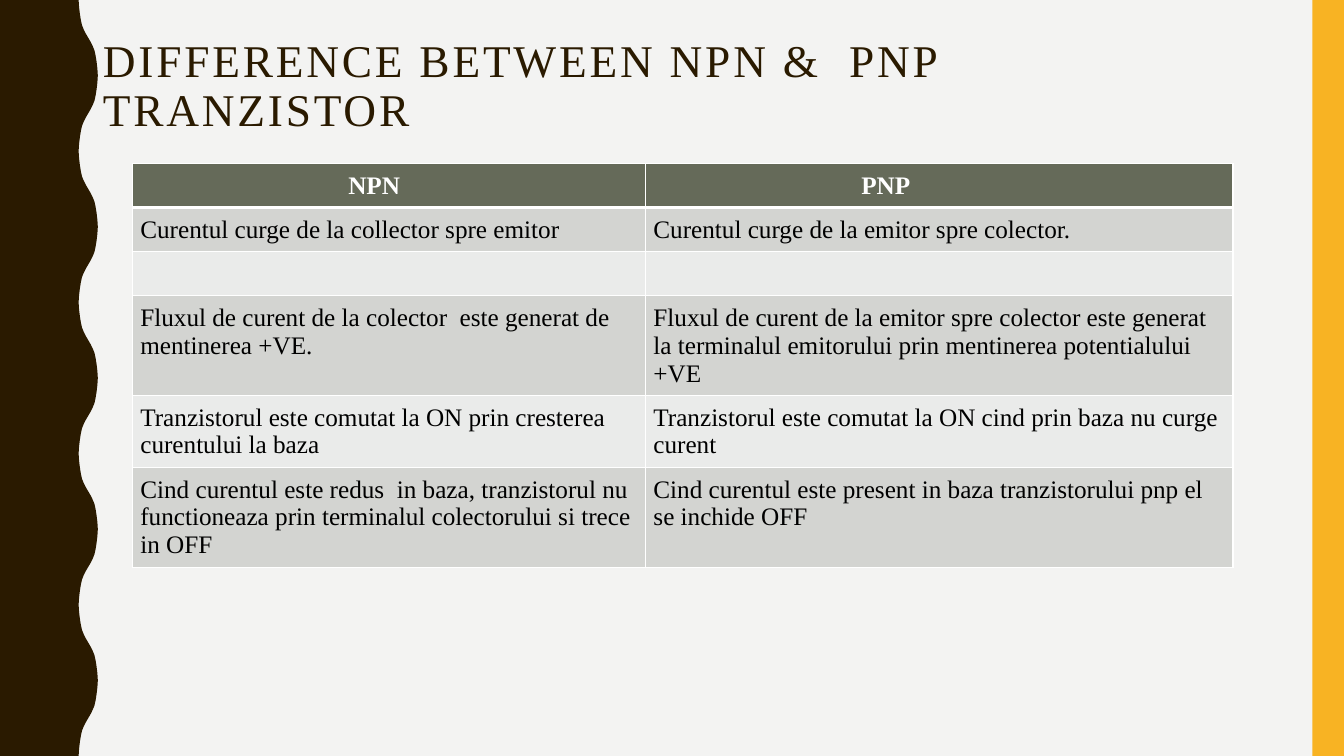
from dataclasses import dataclass

from lxml.etree import SubElement
from pptx import Presentation
from pptx.dml.color import RGBColor as Color
from pptx.enum.shapes import MSO_SHAPE as Shape
from pptx.enum.text import MSO_ANCHOR as Anchor, MSO_AUTO_SIZE as AutoSize, PP_ALIGN as Align
from pptx.oxml.ns import qn
from pptx.util import Pt


@dataclass(frozen=True)
class Theme:
    font: str = "Times New Roman"
    title_size: float = 32.4
    table_size: float = 18
    background: str = "F3F3F2"
    dark: str = "2A1A00"
    accent: str = "F8B323"
    header: str = "656A59"
    band: str = "D3D4D1"
    light_band: str = "EAEBEA"
    white: str = "FFFFFF"
    black: str = "000000"


@dataclass(frozen=True)
class RowStyle:
    fill: str
    color: str
    bold: bool = False
    indent: float = 0
    top_line: float = 1
    bottom_line: float = 1


THEME = Theme()
WIDTH, HEIGHT = 960, 540
TITLE = "DIFFERENCE BETWEEN NPN &  PNP TRANZISTOR"
COLUMN_WIDTHS = (366.5, 419.8)
ROW_HEIGHT = 29.5
CELL_MARGIN = 5.76
ROWS = [
    ("NPN", "PNP"),
    ("Curentul curge de la collector spre emitor",
     "Curentul curge de la emitor spre colector."),
    ("", ""),
    ("Fluxul de curent de la colector  este generat de mentinerea +VE.",
     "Fluxul de curent de la emitor spre colector este generat la terminalul "
     "emitorului prin mentinerea potentialului +VE"),
    ("Tranzistorul este comutat la ON prin cresterea curentului la baza",
     "Tranzistorul este comutat la ON cind prin baza nu curge curent"),
    ("Cind curentul este redus  in baza, tranzistorul nu functioneaza prin "
     "terminalul colectorului si trece in OFF",
     "Cind curentul este present in baza tranzistorului pnp el se inchide OFF"),
]

# One quarter of a wave: (distance down, distance out)
QUARTER_WAVE = [(0, 0), (5, 0.3), (10, 0.9), (14.4, 1.6),
                (18, 2.4), (21, 3.6), (24, 5.1), (27, 6.85)]
WAVE_BASE, WAVE_DEPTH, HALF_WAVE, WAVE_COUNT = 56.2, 13.7, 54, 5


def paint(shape, color: str) -> None:
    shape.shadow.inherit = False
    shape.fill.solid()
    shape.fill.fore_color.rgb = Color.from_string(color)
    shape.line.fill.background()


def format_run(run, size: float, color: str, bold: bool = False) -> None:
    run.font.name = THEME.font
    run.font.size = Pt(size)
    run.font.bold = bold
    run.font.color.rgb = Color.from_string(color)


def wave_points() -> list[tuple[float, float]]:
    out = QUARTER_WAVE + [(HALF_WAVE - y, WAVE_DEPTH - x)
                          for y, x in reversed(QUARTER_WAVE[:-1])]
    period = out + [(2 * HALF_WAVE - y, x) for y, x in reversed(out[1:-1])]
    points = [(WAVE_BASE + x, y + 2 * HALF_WAVE * number)
              for number in range(WAVE_COUNT) for y, x in period]
    return points + [(WAVE_BASE, HEIGHT)]


def draw_side_bands(slide) -> None:
    outline = wave_points() + [(0, HEIGHT)]
    builder = slide.shapes.build_freeform(0, 0)
    builder.add_line_segments([(Pt(x), Pt(y)) for x, y in outline], close=True)
    paint(builder.convert_to_shape(), THEME.dark)

    strip_width = 22.5
    strip = slide.shapes.add_shape(Shape.RECTANGLE, Pt(WIDTH - strip_width), Pt(0),
                                   Pt(strip_width), Pt(HEIGHT))
    paint(strip, THEME.accent)


def draw_title(slide) -> None:
    title = slide.shapes.title
    slide.shapes._spTree.append(title._element)
    title.left, title.top, title.width, title.height = Pt(66.3), Pt(23.8), Pt(838), Pt(46.8)
    text_frame = title.text_frame
    text_frame.text = TITLE
    text_frame.word_wrap = True
    text_frame.auto_size = AutoSize.NONE
    text_frame.vertical_anchor = Anchor.TOP
    paragraph = text_frame.paragraphs[0]
    paragraph.alignment = Align.LEFT
    paragraph.line_spacing = 0.9
    run = paragraph.runs[0]
    format_run(run, THEME.title_size, THEME.dark)
    run._r.get_or_add_rPr().set("spc", "200")


def set_border(cell, side: str, width: float) -> None:
    line = SubElement(cell._tc.get_or_add_tcPr(), qn(f"a:ln{side}"), w=str(Pt(width)))
    fill = SubElement(line, qn("a:solidFill"))
    SubElement(fill, qn("a:srgbClr"), val=THEME.white)


def fill_cell(cell, text: str, style: RowStyle) -> None:
    cell.margin_left = cell.margin_right = Pt(CELL_MARGIN)
    cell.margin_top = cell.margin_bottom = Pt(CELL_MARGIN)
    for side, width in (("L", 1), ("R", 1), ("T", style.top_line), ("B", style.bottom_line)):
        set_border(cell, side, width)
    cell.fill.solid()
    cell.fill.fore_color.rgb = Color.from_string(style.fill)

    paragraph = cell.text_frame.paragraphs[0]
    if text:
        paragraph.text = text
        format_run(paragraph.runs[0], THEME.table_size, style.color, style.bold)
    else:
        # An empty cell keeps the height of one table line
        end = SubElement(paragraph._p, qn("a:endParaRPr"), sz=str(Pt(THEME.table_size).centipoints))
        SubElement(end, qn("a:latin"), typeface=THEME.font)
    if style.indent:
        paragraph._p.get_or_add_pPr().set("marL", str(Pt(style.indent)))


def row_style(index: int) -> RowStyle:
    if index == 0:
        return RowStyle(THEME.header, THEME.white, bold=True, indent=148.5, bottom_line=3)
    fill = THEME.band if index % 2 else THEME.light_band
    return RowStyle(fill, THEME.black, top_line=3 if index == 1 else 1)


def draw_table(slide) -> None:
    frame = slide.shapes.add_table(len(ROWS), len(COLUMN_WIDTHS), Pt(94.5), Pt(116.8),
                                   Pt(sum(COLUMN_WIDTHS)), Pt(ROW_HEIGHT * len(ROWS)))
    table = frame.table
    for column, width in zip(table.columns, COLUMN_WIDTHS):
        column.width = Pt(width)
    for row_index, texts in enumerate(ROWS):
        for column_index, text in enumerate(texts):
            fill_cell(table.cell(row_index, column_index), text, row_style(row_index))


def main() -> None:
    presentation = Presentation()
    presentation.slide_width, presentation.slide_height = Pt(WIDTH), Pt(HEIGHT)
    slide = presentation.slides.add_slide(presentation.slide_layouts.get_by_name("Title Only"))
    slide.background.fill.solid()
    slide.background.fill.fore_color.rgb = Color.from_string(THEME.background)

    draw_side_bands(slide)
    draw_title(slide)
    draw_table(slide)
    presentation.save("out.pptx")


if __name__ == "__main__":
    main()
